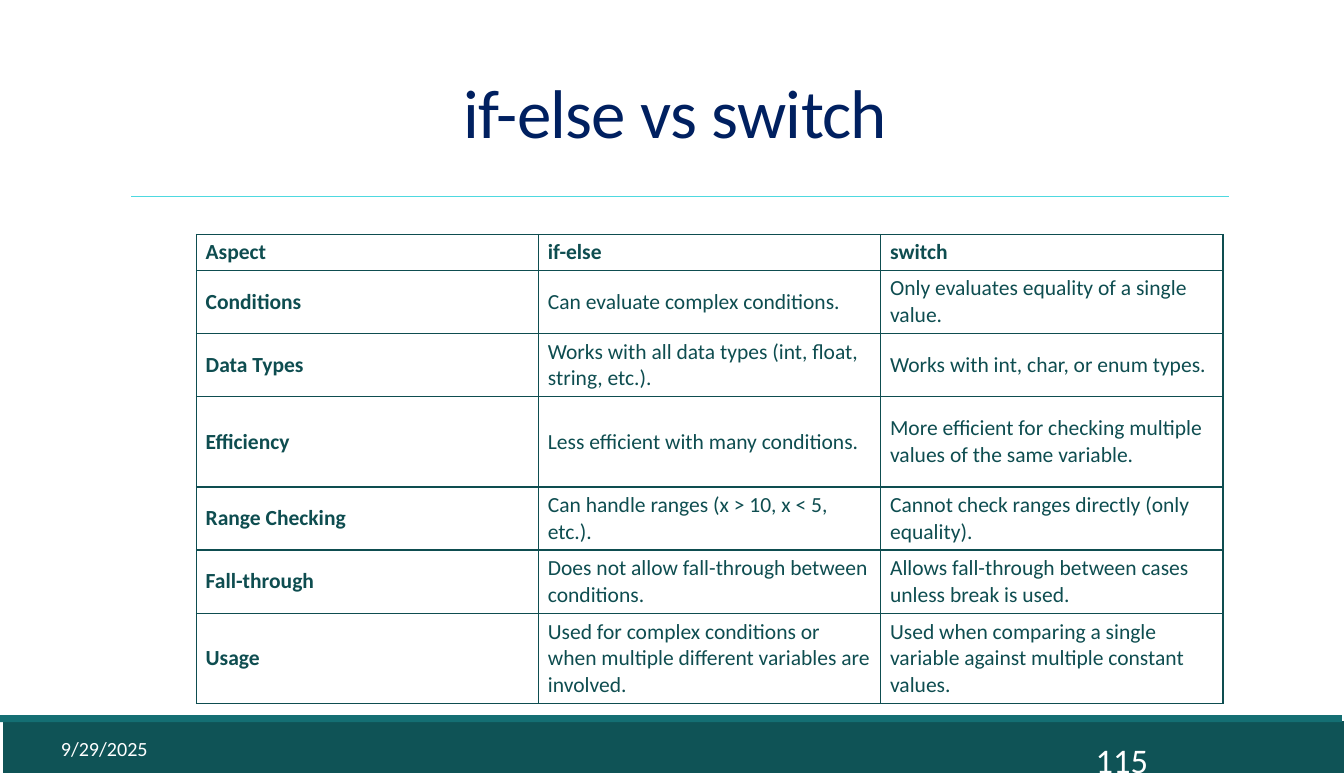
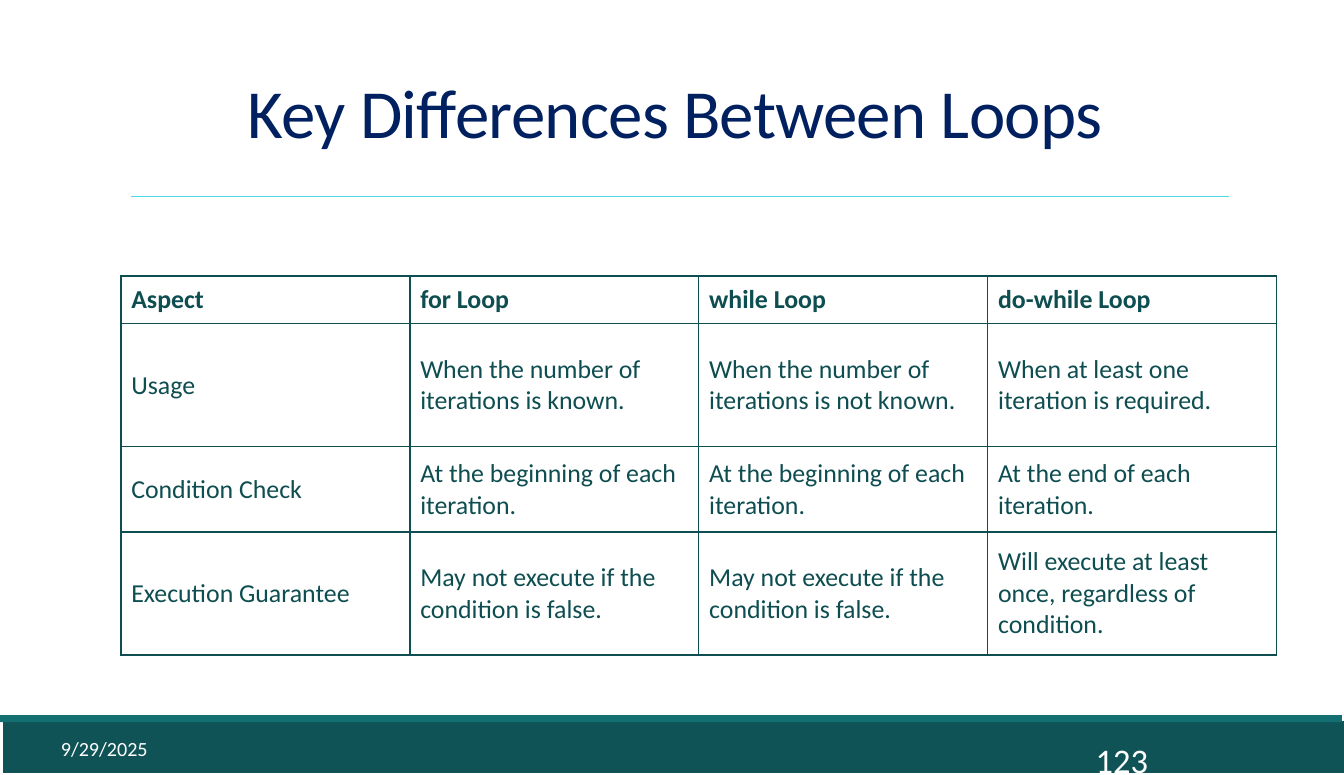
from lxml import etree
from pptx import Presentation
from pptx.dml.color import RGBColor
from pptx.enum.shapes import MSO_CONNECTOR, MSO_SHAPE
from pptx.enum.text import MSO_ANCHOR, PP_ALIGN
from pptx.oxml.ns import qn
from pptx.util import Inches, Pt

RECT = MSO_SHAPE.RECTANGLE
STRAIGHT = MSO_CONNECTOR.STRAIGHT
MIDDLE, BOTTOM = MSO_ANCHOR.MIDDLE, MSO_ANCHOR.BOTTOM
LEFT, CENTER = PP_ALIGN.LEFT, PP_ALIGN.CENTER

COLORS = {
    "band": "0F5356",
    "strip": "146F73",
    "rule": "4ED9E0",
    "title": "002060",
    "table": "0E4D50",
    "white": "FFFFFF",
}
FONT = "Calibri"
SLIDE_W, SLIDE_H = Inches(13), Inches(7.5)
COLS, ROWS = 130, 75

HEADER_BOX = (11.7, 3.1, 107.2, 15.9)
FOOTER_BOX = (0, 69.2, 130, 5.8)
DATE = "9/29/2025"

SLIDES = [
    {
        "title": "if-else vs switch",
        "number": "115",
        "box": (19, 22.7, 99.3, 45.4),
        "lines": [1, 2, 2, 3, 2, 2, 3],
        "size": 15,
        "inset": (0.9, 0.4),
        "bold_aspects": True,
        "rows": [
            ["Aspect", "if-else", "switch"],
            ["Conditions", "Can evaluate complex conditions.",
             "Only evaluates equality of a single value."],
            ["Data Types", "Works with all data types (int, float, string, etc.).",
             "Works with int, char, or enum types."],
            ["Efficiency", "Less efficient with many conditions.",
             "More efficient for checking multiple values of the same variable."],
            ["Range Checking", "Can handle ranges (x > 10, x < 5, etc.).",
             "Cannot check ranges directly (only equality)."],
            ["Fall-through", "Does not allow fall-through between conditions.",
             "Allows fall-through between cases unless break is used."],
            ["Usage",
             "Used for complex conditions or when multiple different variables are involved.",
             "Used when comparing a single variable against multiple constant values."],
        ],
    },
    {
        "title": "Key Differences Between Loops",
        "number": "123",
        "box": (11.7, 26.7, 111.8, 36.7),
        "lines": [1, 3, 2, 3],
        "size": 18,
        "inset": (1, 0.5),
        "bold_aspects": False,
        "rows": [
            ["Aspect", "for Loop", "while Loop", "do-while Loop"],
            ["Usage", "When the number of iterations is known.",
             "When the number of iterations is not known.",
             "When at least one iteration is required."],
            ["Condition Check", "At the beginning of each iteration.",
             "At the beginning of each iteration.", "At the end of each iteration."],
            ["Execution Guarantee", "May not execute if the condition is false.",
             "May not execute if the condition is false.",
             "Will execute at least once, regardless of condition."],
        ],
    },
]


def gx(cols):
    """Turn grid columns into a length."""
    return round(SLIDE_W * cols / COLS)


def gy(rows):
    """Turn grid rows into a length."""
    return round(SLIDE_H * rows / ROWS)


def place(box, dx, dy, w, h):
    """Return left, top, width and height of a part inside a box."""
    return gx(box[0] + dx), gy(box[1] + dy), gx(w), gy(h)


def rgb(name):
    """Look up a named colour."""
    return RGBColor.from_string(COLORS[name])


def write(tf, text, *, size, color, bold=False, align=LEFT, spacing=None, tracking=None):
    """Write one formatted paragraph into a text frame."""
    p = tf.paragraphs[0]
    p.alignment = align
    if spacing:
        p.line_spacing = spacing
    r = p.add_run()
    r.text = text
    r.font.name, r.font.size, r.font.bold = FONT, Pt(size), bold
    r.font.color.rgb = rgb(color)
    if tracking:
        r.font._element.set("spc", str(round(tracking * 100)))


def add_text(s, pos, text, anchor=MIDDLE, **fmt):
    """Add a wrapping text box."""
    tf = s.shapes.add_textbox(*pos).text_frame
    tf.word_wrap = True
    tf.vertical_anchor = anchor
    write(tf, text, **fmt)


def add_band(s, pos, color):
    """Add a plain filled rectangle."""
    sp = s.shapes.add_shape(RECT, *pos)
    sp.shadow.inherit = False
    sp.fill.solid()
    sp.fill.fore_color.rgb = rgb(color)
    sp.line.fill.background()


def add_header(s, box, title):
    """Add the centred title with the thin rule at the foot of the box."""
    x, y, w, h = box
    add_text(s, place(box, 0, 0, w, 12.2), title, anchor=BOTTOM, size=48,
             color="title", align=CENTER, spacing=0.85, tracking=-0.5)
    rule = s.shapes.add_connector(STRAIGHT, gx(x + 1), gy(y + h), gx(x + w), gy(y + h))
    rule.line.color.rgb = rgb("rule")
    rule.line.width = Pt(0.5)
    etree.SubElement(rule._element.spPr, qn("a:effectLst"))


def add_footer(s, box, number):
    """Add the footer bands, the slide number and the date."""
    w = box[2]
    add_band(s, place(box, 0.3, 0.6, w, 5), "band")
    add_band(s, place(box, -0.2, 0, w, 0.7), "strip")
    add_text(s, place(box, 105, 2.7, 14, 3.2), number, size=24, color="white")
    add_text(s, place(box, 4.9, 1.2, 26.4, 4), DATE, size=14, color="white")


def add_borders(cell, color, width):
    """Draw a solid line on all four sides of a cell."""
    tcPr = cell._tc.get_or_add_tcPr()
    for side in ("lnL", "lnR", "lnT", "lnB"):
        ln = etree.SubElement(tcPr, qn(f"a:{side}"), w=str(Pt(width)))
        fill = etree.SubElement(ln, qn("a:solidFill"))
        etree.SubElement(fill, qn("a:srgbClr"), val=COLORS[color])


def add_comparison(s, box, rows, lines, size, inset, bold_aspects):
    """Add a bordered table whose row heights follow their line counts."""
    w, h = box[2:]
    n_cols = len(rows[0])
    tbl = s.shapes.add_table(len(rows), n_cols, *place(box, 0, 0, w, h)).table
    tbl.first_row = tbl.horz_banding = False
    pad = 2 * inset[1]
    step = (h - pad * len(rows)) / sum(lines)
    for col in tbl.columns:
        col.width = gx(w / n_cols)
    for i, (texts, n) in enumerate(zip(rows, lines)):
        tbl.rows[i].height = gy(pad + step * n)
        for j, text in enumerate(texts):
            cell = tbl.cell(i, j)
            cell.margin_left = cell.margin_right = gx(inset[0])
            cell.margin_top = cell.margin_bottom = gy(inset[1])
            cell.vertical_anchor = MIDDLE
            add_borders(cell, "table", 1)
            cell.fill.background()
            write(cell.text_frame, text, size=size, color="table",
                  bold=i == 0 or (j == 0 and bold_aspects))


def add_slide(prs, title, number, **table):
    """Add a comparison slide with its header, table and footer."""
    s = prs.slides.add_slide(prs.slide_layouts[6])
    add_footer(s, FOOTER_BOX, number)
    add_header(s, HEADER_BOX, title)
    add_comparison(s, **table)


def main():
    """Build and save the presentation."""
    prs = Presentation()
    prs.slide_width, prs.slide_height = SLIDE_W, SLIDE_H
    for content in SLIDES:
        add_slide(prs, **content)
    prs.save("out.pptx")


if __name__ == "__main__":
    main()
